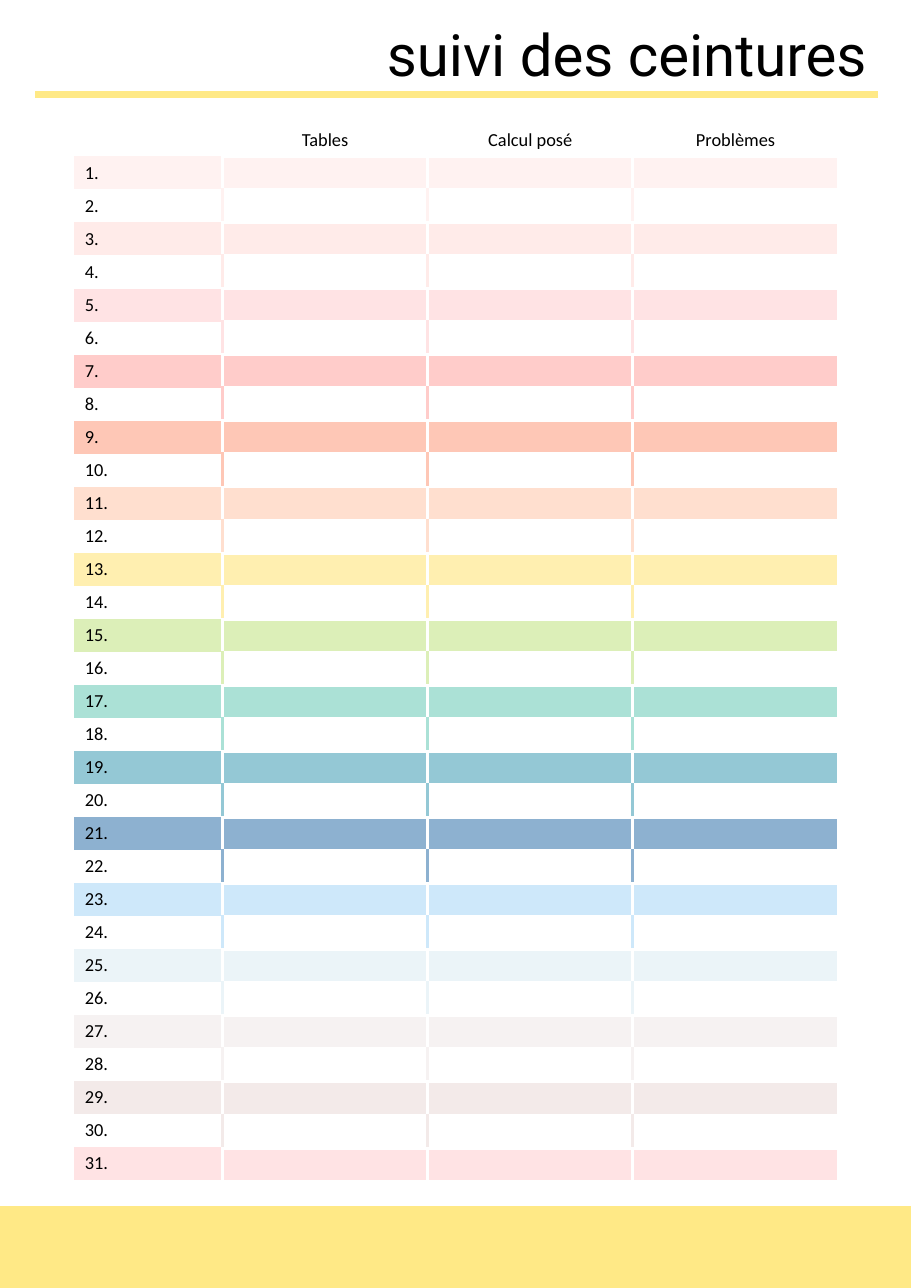
"""Build the belt tracking sheet."""
from dataclasses import dataclass

from lxml import etree
from pptx import Presentation
from pptx.dml.color import RGBColor
from pptx.enum import shapes, text
from pptx.oxml.ns import qn
from pptx.util import Inches, Pt


@dataclass(frozen=True)
class Theme:
    """Hold the colours, fonts and sizes of the sheet."""
    ink: str = "000000"
    paper: str = "FFFFFF"
    accent: str = "FFE986"
    head: str = "Roboto"
    body: str = "Calibri"
    big: int = 38
    small: int = 12
    rule: float = 4.75
    thick: float = 2.25
    thin: float = 1.5
    tints: tuple = (
        "FFF2F1", "FFEBE9", "FFE3E4", "FFCCCA", "FEC7B6", "FFDFCF",
        "FFEFB0", "DCEFB8", "ABE1D6", "94C8D5", "8DB1D0", "CEE8FA",
        "EBF4F8", "F6F2F2", "F3EAE9", "FFE3E4")


THEME = Theme()
HEADS = ("Tables", "Calcul posé", "Problèmes")
COUNT = 31
ROW = 0.3


def color(code):
    """Turn a hex code into a colour."""
    return RGBColor.from_string(code)


def write(frame, words, font=THEME.body, size=THEME.small,
          align=text.PP_ALIGN.LEFT, anchor=text.MSO_ANCHOR.MIDDLE):
    """Write one formatted paragraph in a text frame."""
    frame.vertical_anchor = anchor
    para = frame.paragraphs[0]
    para.alignment = align
    run = para.add_run()
    run.text = words
    run.font.name = font
    run.font.size = Pt(size)
    run.font.color.rgb = color(THEME.ink)


def add_title(slide, words):
    """Place the title at the top right."""
    title = slide.shapes.title
    title.left, title.top = Inches(0.44), Inches(0.12)
    title.width, title.height = Inches(7.53), Inches(0.74)
    frame = title.text_frame
    frame.auto_size = text.MSO_AUTO_SIZE.NONE
    write(frame, words, font=THEME.head, size=THEME.big,
          align=text.PP_ALIGN.RIGHT, anchor=text.MSO_ANCHOR.TOP)


def add_band(slide):
    """Draw the coloured band at the foot of the page."""
    band = slide.shapes.add_shape(
        shapes.MSO_SHAPE.RECTANGLE, 0, Inches(10.95), Inches(8.27), Inches(0.74))
    band.shadow.inherit = False
    band.fill.solid()
    band.fill.fore_color.rgb = color(THEME.accent)
    band.line.color.rgb = color(THEME.accent)
    band.line.width = Pt(1)


def add_rule(slide):
    """Draw the line below the title."""
    rule = slide.shapes.add_connector(
        shapes.MSO_CONNECTOR.STRAIGHT,
        Inches(0.32), Inches(0.86), Inches(7.97), Inches(0.86))
    rule.line.color.rgb = color(THEME.accent)
    rule.line.width = Pt(THEME.rule)
    etree.SubElement(rule._element.spPr, qn("a:effectLst"))


def add_grid(slide, left, top, width, rows, cols):
    """Add a plain table with equal rows and columns."""
    grid = slide.shapes.add_table(
        rows, cols, Inches(left), Inches(top),
        Inches(width), Inches(ROW * rows)).table
    grid.first_row = grid.horz_banding = False
    return grid


def add_edge(cell, side, code, width):
    """Draw one cell border, or clear it when no colour is given."""
    line = etree.SubElement(cell._tc.get_or_add_tcPr(), qn(f"a:ln{side}"))
    line.set("w", str(Pt(width)))
    if code is None:
        etree.SubElement(line, qn("a:noFill"))
    else:
        fill = etree.SubElement(line, qn("a:solidFill"))
        etree.SubElement(fill, qn("a:srgbClr")).set("val", code)


def fill_cell(cell, code, edges, words="", **form):
    """Set the borders, fill and text of a cell."""
    cell.margin_top = cell.margin_bottom = Inches(0.04)
    for side, (shade, width) in zip("LRTB", edges):
        add_edge(cell, side, shade, width)
    cell.fill.solid()
    cell.fill.fore_color.rgb = color(code)
    if words:
        write(cell.text_frame, words, **form)
        cell.vertical_anchor = text.MSO_ANCHOR.MIDDLE
    else:
        para = cell.text_frame.paragraphs[0]._p
        end = etree.SubElement(para, qn("a:endParaRPr"))
        end.set("sz", str(THEME.small * 100))


def shade_of(row):
    """Give the tint of a row pair and the fill of the row."""
    tint = THEME.tints[row // 2]
    return tint, THEME.paper if row % 2 else tint


def add_marks(slide):
    """Add the column of row numbers."""
    grid = add_grid(slide, 0.67, 1.42, 1.34, COUNT, 1)
    for row in range(COUNT):
        fill_cell(grid.cell(row, 0), shade_of(row)[1],
                  [(None, THEME.thin)] * 4, f"{row + 1}.")


def add_tracks(slide):
    """Add the tracking columns with their headings."""
    grid = add_grid(slide, 2.02, 1.12, 5.59, COUNT + 1, len(HEADS))
    white = (THEME.paper, THEME.thick)
    rim = (THEME.paper, THEME.thin)
    for col, head in enumerate(HEADS):
        last = col == len(HEADS) - 1
        fill_cell(grid.cell(0, col), THEME.paper,
                  [white, rim if last else white, rim, white],
                  head, align=text.PP_ALIGN.CENTER)
        for row in range(COUNT):
            tint, fill = shade_of(row)
            side = (tint, THEME.thick) if row % 2 else white
            base = rim if row == COUNT - 1 else white
            fill_cell(grid.cell(row + 1, col), fill,
                      [side, rim if last else side, white, base])


def main():
    """Build and save the sheet."""
    deck = Presentation()
    deck.slide_width, deck.slide_height = Inches(8.27), Inches(11.69)
    slide = deck.slides.add_slide(deck.slide_layouts[5])
    add_band(slide)
    add_rule(slide)
    add_title(slide, "suivi des ceintures")
    add_marks(slide)
    add_tracks(slide)
    deck.save("out.pptx")


if __name__ == "__main__":
    main()
